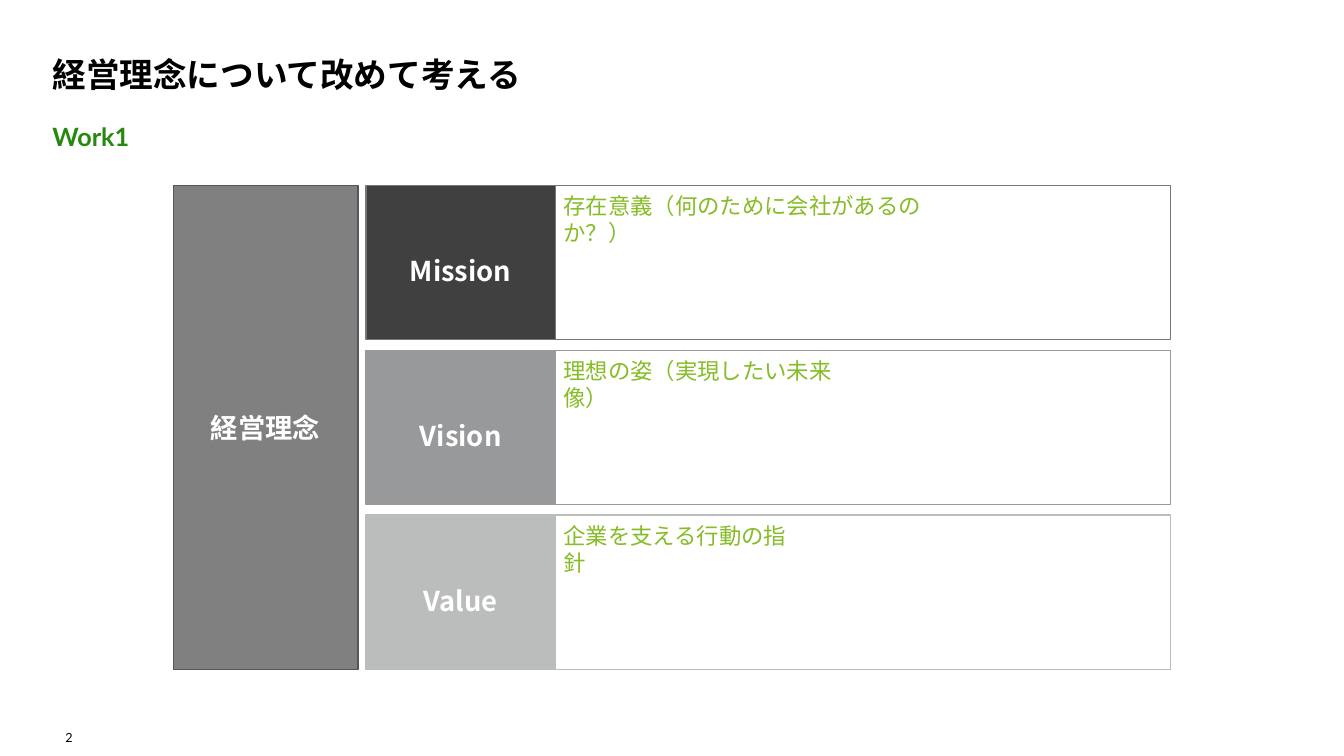
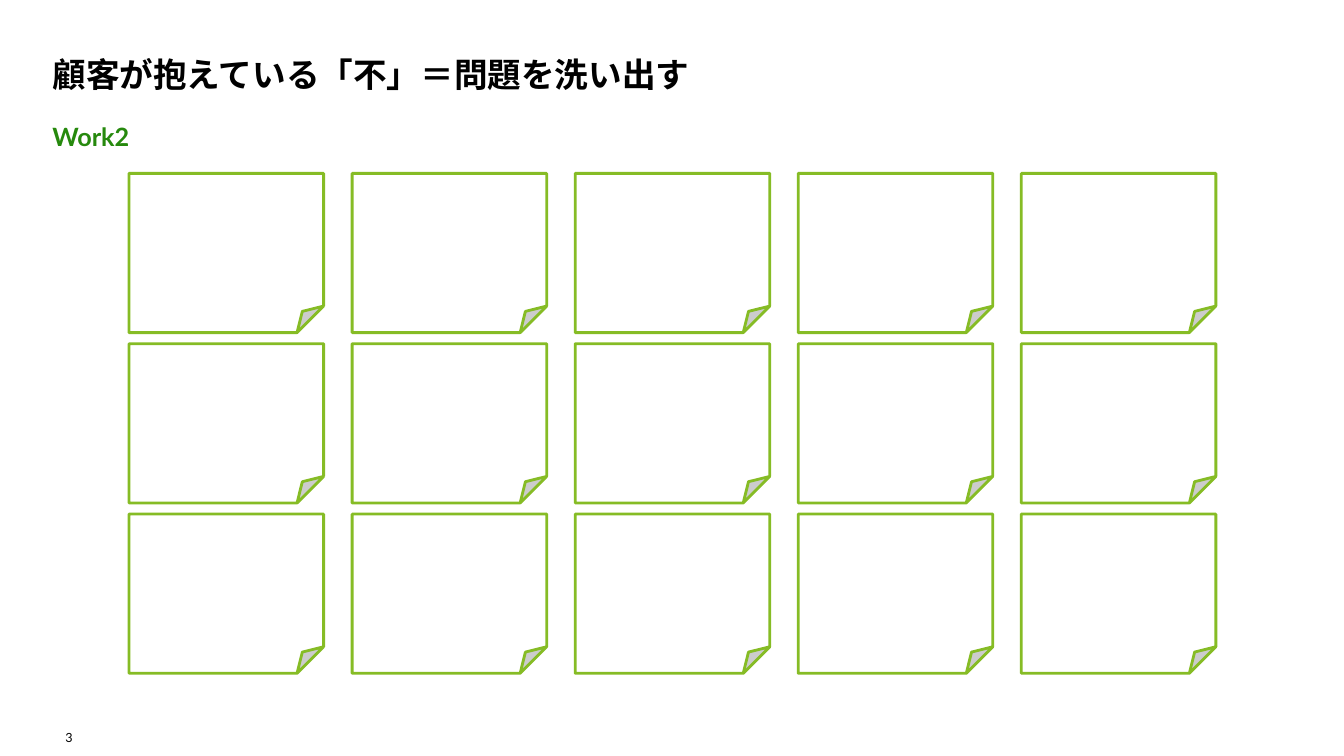
from lxml.etree import SubElement
from pptx import Presentation
from pptx.dml.color import RGBColor
from pptx.enum.shapes import MSO_SHAPE
from pptx.enum.text import MSO_ANCHOR, PP_ALIGN
from pptx.oxml.ns import qn
from pptx.util import Inches, Pt

BLACK = RGBColor(0x00, 0x00, 0x00)
WHITE = RGBColor(0xFF, 0xFF, 0xFF)
GREEN = RGBColor(0x86, 0xBC, 0x25)
DARK_GREEN = RGBColor(0x26, 0x89, 0x0D)
CHARCOAL = RGBColor(0x40, 0x40, 0x40)
SLATE = RGBColor(0x53, 0x56, 0x5A)
STEEL = RGBColor(0x75, 0x78, 0x7B)
GRAY = RGBColor(0x80, 0x80, 0x80)
SILVER = RGBColor(0x97, 0x99, 0x9B)
LIGHT = RGBColor(0xBB, 0xBC, 0xBC)

LATIN = "Lato"
CJK = "Noto Sans CJK JP"


class Deck:
    """Holds the shared style and the current slide."""

    def __init__(self):
        self.prs = Presentation()
        self.prs.slide_width = Inches(13.33)
        self.prs.slide_height = Inches(7.5)
        self.s = None

    def slide(self, number, title, label):
        """Start a slide with page number, work label and title."""
        self.s = self.prs.slides.add_slide(self.prs.slide_layouts[6])
        self.text(0.52, 7.2, 0.2, 0.19, str(number), 9, BLACK, font=LATIN,
                  anchor=MSO_ANCHOR.BOTTOM, align=PP_ALIGN.RIGHT, wrap=False)
        self.text(0.52, 1.1, 12.28, 0.51, label, 18, DARK_GREEN, font=LATIN,
                  bold=True, anchor=MSO_ANCHOR.MIDDLE)
        self.text(0.52, 0.12, 12.28, 0.81, title, 24, BLACK, font=LATIN,
                  bold=True, anchor=MSO_ANCHOR.BOTTOM)

    def set_text(self, shape, text, size, color, font=CJK, bold=False, inset=0,
                 anchor=MSO_ANCHOR.TOP, align=PP_ALIGN.LEFT, wrap=True,
                 spacing=None):
        """Fill the text frame of a shape with one styled run."""
        tf = shape.text_frame
        tf.word_wrap = wrap
        tf.vertical_anchor = anchor
        tf.margin_left = tf.margin_right = Inches(inset)
        tf.margin_top = tf.margin_bottom = Inches(inset)
        p = tf.paragraphs[0]
        p.alignment = align
        if spacing:
            p.line_spacing = spacing
        r = p.add_run()
        r.text = text
        r.font.size = Pt(size)
        r.font.bold = bold
        r.font.color.rgb = color
        r.font.name = font
        # East Asian characters need their own typeface
        SubElement(r._r.get_or_add_rPr(), qn("a:ea"), typeface=CJK)

    def text(self, x, y, w, h, text, size, color, **style):
        sp = self.s.shapes.add_textbox(Inches(x), Inches(y), Inches(w), Inches(h))
        self.set_text(sp, text, size, color, **style)

    def box(self, x, y, w, h, line, fill=None, weight=1,
            kind=MSO_SHAPE.RECTANGLE):
        sp = self.s.shapes.add_shape(kind, Inches(x), Inches(y), Inches(w), Inches(h))
        sp.shadow.inherit = False
        if fill is None:
            sp.fill.background()
        else:
            sp.fill.solid()
            sp.fill.fore_color.rgb = fill
        sp.line.color.rgb = line
        sp.line.width = Pt(weight)
        return sp

    def heading_box(self, x, y, w, h, line, fill, text, spacing=None):
        sp = self.box(x, y, w, h, line, fill)
        self.set_text(sp, text, 19.5, WHITE, bold=True, inset=0.03,
                      anchor=MSO_ANCHOR.MIDDLE, align=PP_ALIGN.CENTER,
                      spacing=spacing)


def philosophy_slide(deck):
    deck.slide(2, "経営理念について改めて考える", "Work1")
    top, height, gap = 1.84, 1.53, 0.105
    pitch = height + gap
    rows = [
        ("Mission", CHARCOAL, STEEL, "存在意義（何のために会社があるのか？）", 3.87),
        ("Vision", SILVER, SILVER, "理想の姿（実現したい未来像）", 2.94),
        ("Value", LIGHT, LIGHT, "企業を支える行動の指針", 2.27),
    ]
    # One row per element: answer area, heading and hint
    for i, (name, fill, line, hint, hint_width) in enumerate(rows):
        y = top + i * pitch
        deck.box(5.51, y, 6.1, height, line)
        deck.heading_box(3.63, y, 1.88, height, line, fill, name, spacing=1.5)
        deck.text(5.59, y + 0.07, hint_width, 0.27, hint, 16, GREEN)
    # Column that spans all rows
    deck.heading_box(1.72, top, 1.83, 2 * pitch + height, SLATE, GRAY, "経営理念")


def problems_slide(deck):
    deck.slide(3, "顧客が抱えている「不」＝問題を洗い出す", "Work2")
    # Grid of empty sticky notes
    left, right, columns = 1.28, 10.13, 5
    pitch = (right - left) / (columns - 1)
    for col in range(columns):
        for row in range(3):
            deck.box(left + col * pitch, 1.72 + row * 1.69, 1.93, 1.58, GREEN,
                     WHITE, weight=2, kind=MSO_SHAPE.FOLDED_CORNER)


def main():
    deck = Deck()
    philosophy_slide(deck)
    problems_slide(deck)
    deck.prs.save("out.pptx")


if __name__ == "__main__":
    main()
